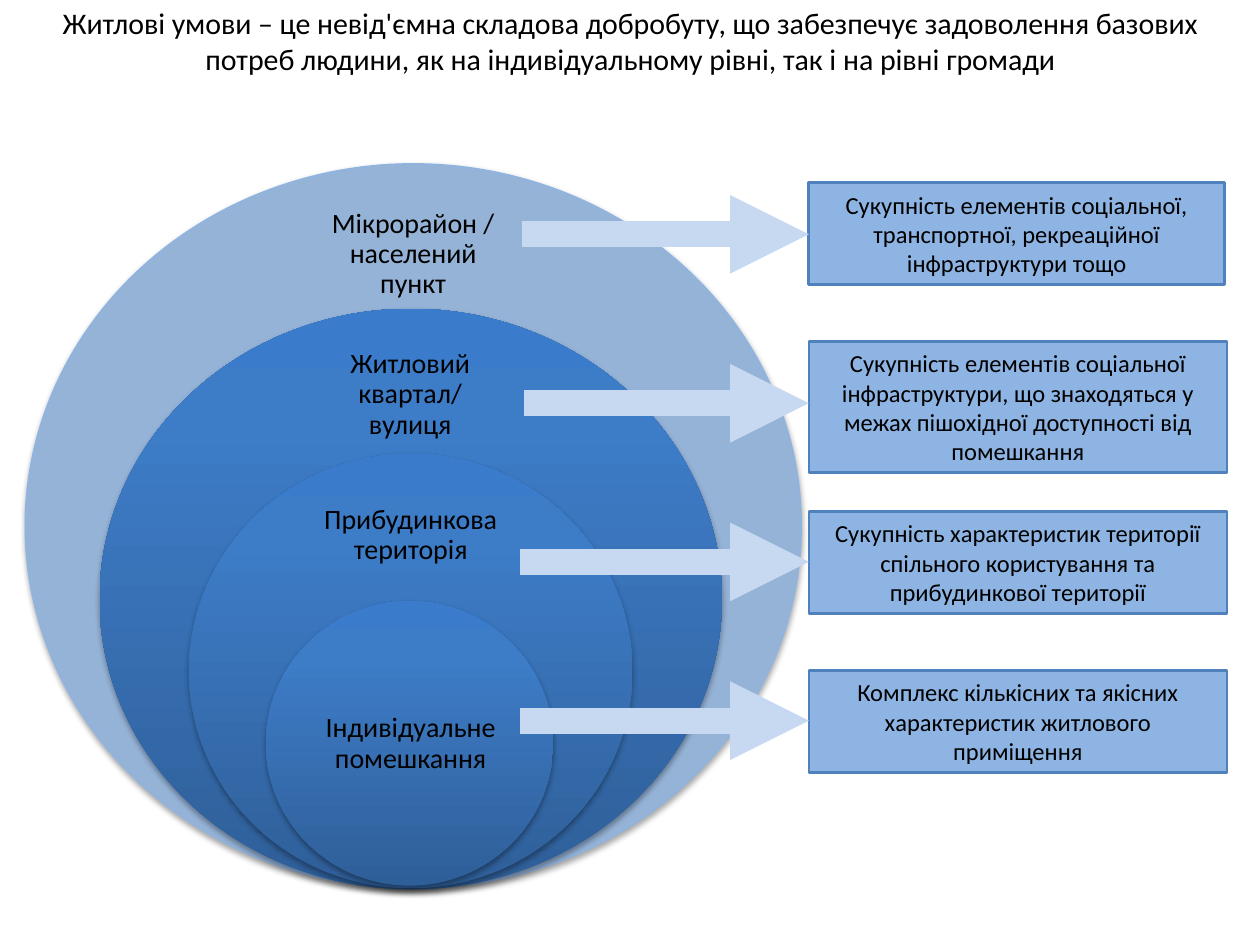
from copy import deepcopy
from lxml.etree import SubElement as Sub
from pptx import Presentation
from pptx.dml.color import RGBColor as Rgb
from pptx.enum.shapes import MSO_CONNECTOR as Link, MSO_SHAPE as Kind
from pptx.enum.text import MSO_ANCHOR as Anchor, PP_ALIGN as Align
from pptx.oxml.ns import qn
from pptx.util import Pt

HUES = {
    "text": "000000", "outer": "95B3D7", "rim": "8EB4E3",
    "note": "8EB4E3", "edge": "4F81BD", "arrow": "C6D9F1",
}
FADE = [(0, "2F5F99"), (0.8, "3D7CC7"), (1, "3A7CCB")]
HEAD = ("Житлові умови – це невід'ємна складова добробуту, що забезпечує "
        "задоволення базових потреб людини, як на індивідуальному рівні, "
        "так і на рівні громади")
RINGS = [
    ("Мікрорайон / населений пункт",
     (0, 0, 443.5, 414), (159.8, 20.9, 123.8, 61.9)),
    ("Житловий квартал/\vвулиця",
     (42.5, 82.8, 355.7, 331.9), (157.7, 102.2, 124.6, 59.8)),
    ("Прибудинкова територія",
     (93.6, 165.6, 253.4, 248.4), (161.3, 184.3, 118.1, 56.2)),
    ("Індивідуальне помешкання",
     (137.5, 249.8, 164.2, 162.7), (162, 290.9, 116.6, 81.4)),
]
NOTES = [
    ("Сукупність елементів соціальної, транспортної, рекреаційної "
     "інфраструктури тощо", 0, 237.6, 58.3, 1, 29.5),
    ("Сукупність елементів соціальної інфраструктури, що знаходяться у "
     "межах пішохідної доступності від помешкання", 90.7, 239, 74.9, 2.2, 126),
    ("Сукупність характеристик території спільного користування та "
     "прибудинкової території", 187.9, 239, 58.3, 0, 216.7),
    ("Комплекс кількісних та якісних характеристик житлового приміщення",
     278.6, 239, 58.3, 0, 307.4),
]


def hue(name):
    return Rgb.from_string(HUES[name])


def place(box, part):
    x, y, w, h = part
    return Pt(box[0] + x), Pt(box[1] + y), Pt(w), Pt(h)


def write(shape, text, size, gap=None):
    frame = shape.text_frame
    frame.word_wrap = True
    frame.vertical_anchor = Anchor.MIDDLE
    frame.text = text
    for para in frame.paragraphs:
        para.alignment = Align.CENTER
        if gap:
            para.line_spacing = gap
        for run in para.runs:
            run.font.name = "Calibri"
            run.font.size = Pt(size)
            run.font.color.rgb = hue("text")


def fade(shape):
    fill = shape.fill
    fill.gradient()
    fill.gradient_angle = 90
    stops = shape._element.spPr.find(qn("a:gradFill")).find(qn("a:gsLst"))
    stops.append(deepcopy(stops[-1]))
    for stop, (spot, tone) in zip(fill.gradient_stops, FADE):
        stop.position = spot
        stop.color.rgb = Rgb.from_string(tone)


def shade(shape):
    shape.shadow.inherit = False
    list_ = shape._element.spPr.find(qn("a:effectLst"))
    cast = Sub(list_, qn("a:outerShdw"), blurRad=str(Pt(3.1)),
               dist=str(Pt(1.8)), dir="5400000", rotWithShape="0")
    tone = Sub(cast, qn("a:srgbClr"), val=HUES["text"])
    Sub(tone, qn("a:alpha"), val="35000")


def add_head(slide, box):
    title, sub = slide.placeholders
    sub._element.getparent().remove(sub._element)
    title.left, title.top, title.width, title.height = map(Pt, box)
    write(title, HEAD, 17.1)


def add_rings(slide, box):
    group = slide.shapes.add_group_shape().shapes
    for i, (text, oval, label) in enumerate(RINGS):
        ring = group.add_shape(Kind.OVAL, *place(box, oval))
        if i:
            fade(ring)
            ring.line.fill.background()
        else:
            ring.fill.solid()
            ring.fill.fore_color.rgb = hue("outer")
            ring.line.color.rgb = hue("rim")
            ring.line.width = Pt(0.75)
        shade(ring)
        area = group.add_textbox(*place(box, label))
        frame = area.text_frame
        frame.margin_left = frame.margin_right = Pt(8.6)
        frame.margin_top = frame.margin_bottom = Pt(8.6)
        write(area, text, 16, 0.9)


def add_arrow(slide, start, end, y):
    arrow = slide.shapes.add_connector(
        Link.STRAIGHT, Pt(end), Pt(y), Pt(start), Pt(y))
    arrow.line.color.rgb = hue("arrow")
    arrow.line.width = Pt(15)
    Sub(arrow.line._get_or_add_ln(), qn("a:headEnd"), type="triangle")
    Sub(arrow._element.spPr, qn("a:effectLst"))


def add_notes(slide, box):
    left, top = box[:2]
    edge = 164.8
    for text, y, wide, high, start, mid in NOTES:
        note = slide.shapes.add_shape(
            Kind.RECTANGLE, *place(box, (edge, y, wide, high)))
        note.shadow.inherit = False
        note.fill.solid()
        note.fill.fore_color.rgb = hue("note")
        note.line.color.rgb = hue("edge")
        note.line.width = Pt(1.5)
        write(note, text, 14)
        add_arrow(slide, left + start, left + edge, top + mid)


def main():
    deck = Presentation()
    deck.slide_width, deck.slide_height = Pt(720), Pt(540)
    slide = deck.slides.add_slide(deck.slide_layouts[0])
    add_head(slide, (14.4, 2.9, 691.9, 40.3))
    add_rings(slide, (14.4, 93.6, 443.5, 414))
    add_notes(slide, (297.4, 104.4, 403.8, 336.9))
    deck.save("out.pptx")


if __name__ == "__main__":
    main()
